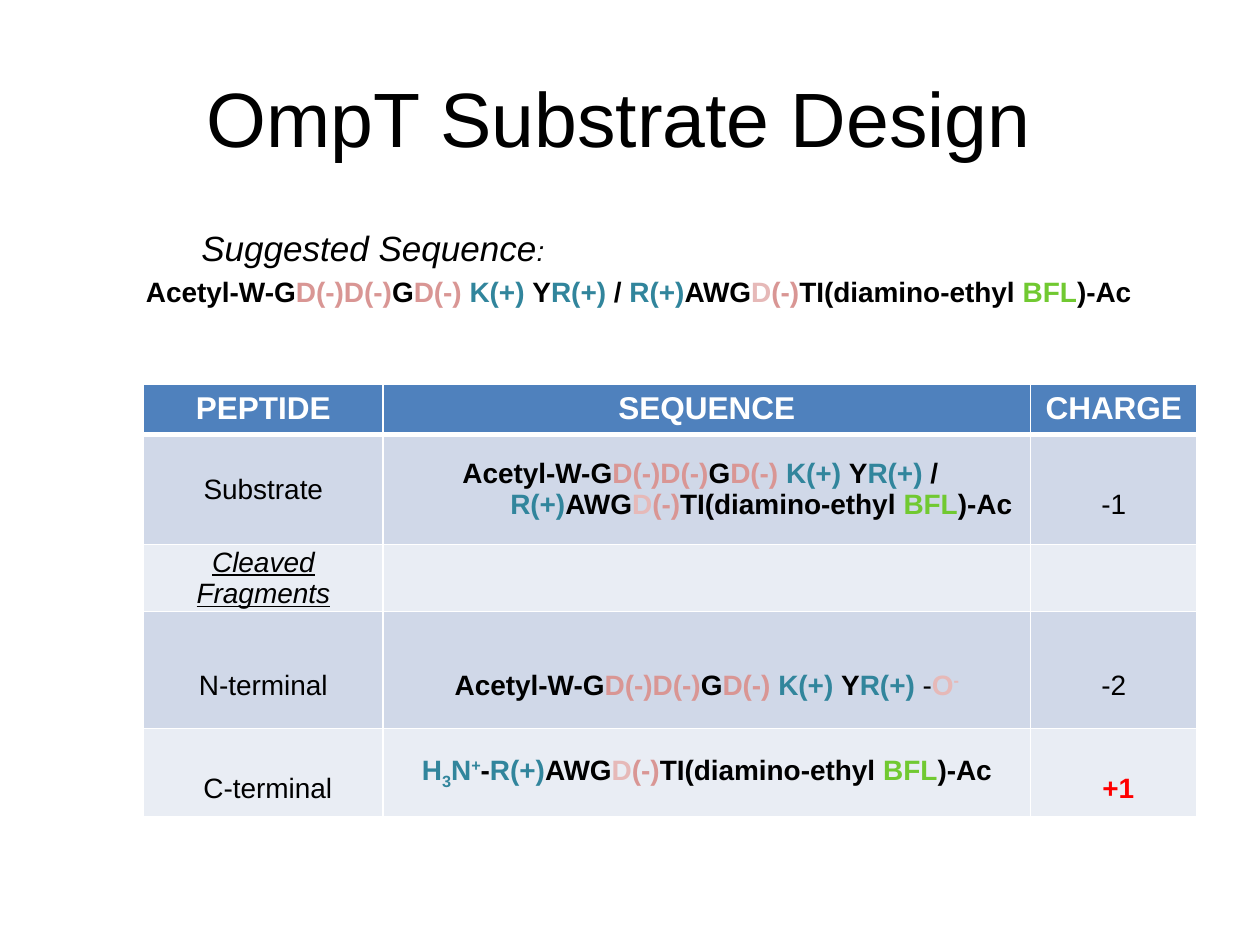
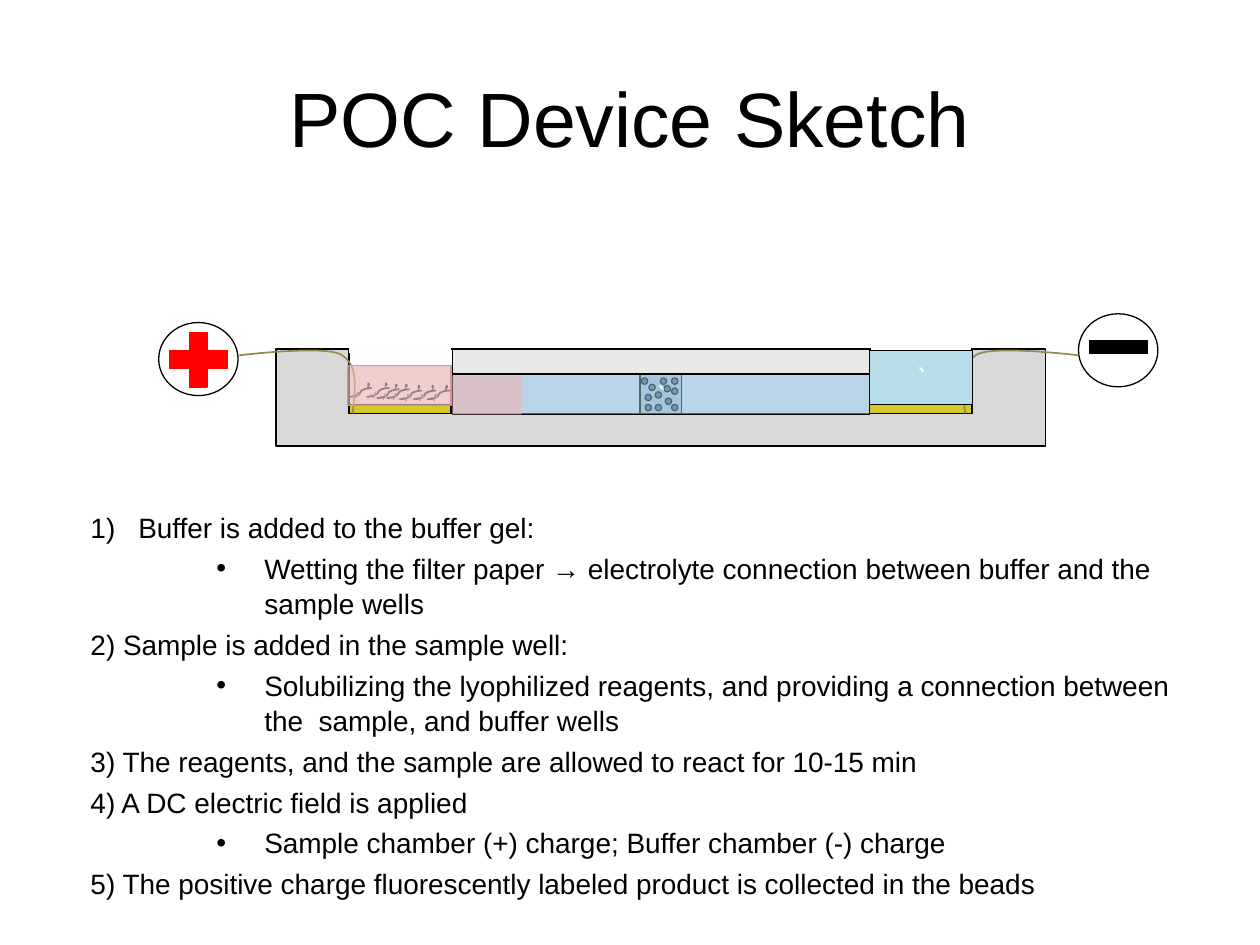
"""Build two slides: a peptide substrate table and a point-of-care device sketch."""
from lxml.etree import SubElement
from pptx import Presentation
from pptx.dml.color import RGBColor
from pptx.enum.shapes import MSO_CONNECTOR, MSO_SHAPE
from pptx.enum.text import MSO_ANCHOR, PP_ALIGN
from pptx.oxml.ns import qn
from pptx.util import Pt

PX = 9144
COLORS = {
    "black": "000000", "white": "FFFFFF", "red": "FF0000", "negative": "D99694",
    "pale": "E6B9B8", "positive": "31859C", "dye": "71C931", "header": "4F81BD",
    "band": "D0D8E8", "light band": "E9EDF4", "base": "D9D9D9", "cover": "E8E8E8",
    "gel": "B9CDE5", "bead gel": "95B3D7", "bead": "376092", "electrode": "D5C828",
    "wire": "948A54", "buffer": "B7DEE8", "minus edge": "C0504D",
}


def add_runs(paragraph, runs, size=16, bold=False, italic=False, underline=False, font="Arial"):
    """Append (text, colour, baseline) runs to a paragraph."""
    for text, color, *baseline in runs:
        run = paragraph.add_run()
        run.text = text
        run.font.name, run.font.size = font, Pt(size)
        run.font.bold, run.font.italic, run.font.underline = bold, italic, underline
        run.font.color.rgb = RGBColor.from_string(COLORS[color])
        if baseline:
            run.font._element.set("baseline", str(baseline[0] * 1000))


def paint(item, line="black", width=0.75, fill=None, alpha=None):
    """Set line, fill and opacity of a shape or connector and remove its shadow."""
    properties = item.element.spPr
    if fill:
        item.fill.solid()
        item.fill.fore_color.rgb = RGBColor.from_string(COLORS[fill])
    if alpha:
        color = properties.find(qn("a:solidFill"))[0]
        SubElement(color, qn("a:alpha")).set("val", str(alpha * 1000))
    if line:
        item.line.color.rgb = RGBColor.from_string(COLORS[line])
        item.line.width = Pt(width)
    else:
        item.line.fill.background()
    SubElement(properties, qn("a:effectLst"))


presentation = Presentation()
presentation.slide_width, presentation.slide_height = 1000 * PX, 750 * PX
slides = []
for title in ("OmpT Substrate Design ", "POC Device Sketch"):
    slide = presentation.slides.add_slide(presentation.slide_layouts[6])
    frame = slide.shapes.add_textbox(50 * PX, 30 * PX, 900 * PX, 125 * PX).text_frame
    frame.word_wrap = True
    frame.vertical_anchor = MSO_ANCHOR.MIDDLE
    frame.paragraphs[0].alignment = PP_ALIGN.CENTER
    add_runs(frame.paragraphs[0], [(title, "black")], 44)
    slides.append(slide)
design_slide, device_slide = slides

n_fragment = [
    ("Acetyl-W-G", "black"), ("D(-)D(-)", "negative"), ("G", "black"), ("D(-)", "negative"),
    (" K(+) ", "positive"), ("Y", "black"), ("R(+) ", "positive"),
]
c_fragment = [
    ("R(+)", "positive"), ("AWG", "black"), ("D", "pale"), ("(-)", "negative"),
    ("TI(diamino-ethyl ", "black"), ("BFL", "dye"), (")-Ac", "black"),
]
substrate = n_fragment + [("/ ", "black")] + c_fragment
amine = [("H", "positive"), ("3", "positive", -25), ("N", "positive"),
         ("+", "positive", 30), ("-", "black")]

frame = design_slide.shapes.add_textbox(50 * PX, 175 * PX, 900 * PX, 495 * PX).text_frame
frame.word_wrap = True
heading, sequence = frame.paragraphs[0], frame.add_paragraph()
for paragraph, margin, space in ((heading, 138, 4), (sequence, 94, 3.2)):
    paragraph.space_before = Pt(space)
    paragraph._p.get_or_add_pPr().set("marL", str(margin * PX))
    paragraph._p.pPr.set("indent", str(-38 * PX))
add_runs(heading, [("Suggested Sequence", "black")], 20, italic=True)
add_runs(heading, [(":", "black")], 16, italic=True)
add_runs(sequence, substrate, bold=True)

peptide_rows = [
    [[(name, "white")] for name in ("PEPTIDE", "SEQUENCE", "CHARGE")],
    [[("Substrate", "black")], substrate, [("-1", "black")]],
    [[("Cleaved Fragments", "black")], [], []],
    [[("N-terminal", "black")], n_fragment, [("-2", "black")]],
    [[("C-terminal", "black")], amine + c_fragment, [("+1", "red")]],
]
double_spaced = {(1, 2), (3, 0), (3, 1), (3, 2), (4, 0), (4, 2)}
table = design_slide.shapes.add_table(5, 3, 114 * PX, 305 * PX, 836 * PX, 333 * PX).table
for column, width in zip(table.columns, (190, 514, 132)):
    column.width = width * PX
for row, height in zip(table.rows, (36, 87, 47, 93, 70)):
    row.height = height * PX
for row_index, row in enumerate(peptide_rows):
    for column_index, runs in enumerate(row):
        cell = table.cell(row_index, column_index)
        place = (row_index, column_index)
        header = row_index == 0
        for side in "LRTB":
            thick = (header and side == "B") or (row_index == 1 and side == "T")
            border = SubElement(cell._tc.get_or_add_tcPr(), qn("a:ln" + side))
            border.set("w", str(Pt(3 if thick else 1)))
            solid = SubElement(border, qn("a:solidFill"))
            SubElement(solid, qn("a:srgbClr")).set("val", COLORS["white"])
        cell.fill.solid()
        band = "header" if header else "band" if row_index % 2 else "light band"
        cell.fill.fore_color.rgb = RGBColor.from_string(COLORS[band])
        if not runs:
            continue
        paragraph = cell.text_frame.paragraphs[0]
        if not header:
            cell.vertical_anchor = MSO_ANCHOR.MIDDLE
            cell.margin_left = cell.margin_right = 7 * PX
            cell.margin_top = cell.margin_bottom = 0
        if place == (1, 1):
            paragraph._p.get_or_add_pPr().set("marL", str(94 * PX))
            paragraph._p.pPr.set("indent", str(-38 * PX))
        else:
            paragraph.alignment = PP_ALIGN.CENTER
        if place in ((4, 0), (4, 2)):
            paragraph._p.get_or_add_pPr().set("marL", str(7 * PX))
        if place in double_spaced:
            paragraph.line_spacing = 2.0
        fragments = row_index == 2
        add_runs(paragraph, runs, 18 if header else 16,
                 bold=header or column_index == 1 or place == (4, 2),
                 italic=fragments, underline=fragments)
        if place == (3, 1):
            add_runs(paragraph, [("-", "black")])
            add_runs(paragraph, [("O", "pale"), ("-", "pale", 30)], bold=True)

shapes = device_slide.shapes
rectangle, ellipse = MSO_SHAPE.RECTANGLE, MSO_SHAPE.OVAL
device_parts = [
    (ellipse, 856, 249, 63, 58, "white"),
    (ellipse, 126, 256, 63, 58, "white"),
    (rectangle, 219, 277, 611, 77, "base"),
    (rectangle, 359, 297, 331, 31, "gel"),
    (rectangle, 508, 297, 33, 31, "bead gel"),
    (rectangle, 277, 277, 82, 51, "white"),
    (rectangle, 690, 277, 82, 51, "white"),
    (rectangle, 359, 277, 331, 20, "cover"),
]
for kind, left, top, width, height, fill in device_parts:
    paint(shapes.add_shape(kind, left * PX, top * PX, width * PX, height * PX), fill=fill)

for start, end, width in ((277, 358, 4.5), (691, 771, 3)):
    opening = shapes.add_connector(MSO_CONNECTOR.STRAIGHT, start * PX, 277 * PX, end * PX, 277 * PX)
    paint(opening, "white", width)

beads = [(509, 300), (533, 300), (512, 321), (533, 321), (528, 316), (524, 300),
         (512, 313), (520, 321), (533, 308), (520, 311), (515, 305), (527, 306)]
for left, top in beads:
    paint(shapes.add_shape(ellipse, left * PX, top * PX, 5 * PX, 5 * PX), fill="bead")
for left in (277, 690):
    electrode = shapes.add_shape(rectangle, left * PX, 321 * PX, 81 * PX, 7 * PX)
    paint(electrode, fill="electrode")

peptide_marks = [
    (MSO_SHAPE.MATH_PLUS, 6, -4, 2, 3, "positive", "positive", 0.75),
    (MSO_SHAPE.MATH_MINUS, 3, -2, 1, 1, "red", "minus edge", 0.5),
    (ellipse, 15, -11, 1, 2, "dye", "black", 0.75),
    (MSO_SHAPE.MATH_MINUS, 5, 0, 1, 1, "red", "minus edge", 0.5),
]
peptide_lines = [
    (MSO_CONNECTOR.CURVE, 0, 0, 18, -7, 1),
    (MSO_CONNECTOR.STRAIGHT, 15, -9, 15, -7, 0.75),
]
for x, y in ((277, 315), (291, 315), (307, 316), (317, 317), (328, 317), (339, 317), (299, 316)):
    for kind, x1, y1, x2, y2, width in peptide_lines:
        strand = shapes.add_connector(
            kind, (x + x1) * PX, (y + y1) * PX, (x + x2) * PX, (y + y2) * PX)
        paint(strand, width=width)
    for kind, dx, dy, width, height, fill, line, weight in peptide_marks:
        mark = shapes.add_shape(kind, (x + dx) * PX, (y + dy) * PX, width * PX, height * PX)
        paint(mark, line, weight, fill)

wire_curves = [
    ((280, 328), (282, 308), (285, 289), (270, 281)),
    ((270, 281), (255, 274), (190, 282), (190, 282)),
]
wire_points = []
for curve in wire_curves:
    for step in range(17):
        t = step / 16
        weights = ((1 - t) ** 3, 3 * t * (1 - t) ** 2, 3 * t * t * (1 - t), t ** 3)
        wire_points.append([sum(w * point[axis] for w, point in zip(weights, curve))
                            for axis in (0, 1)])
for mirrored in (False, True):
    points = [(round((1046 - x if mirrored else x) * PX), round(y * PX)) for x, y in wire_points]
    builder = shapes.build_freeform(*points[0])
    builder.add_line_segments(points[1:], close=False)
    wire = builder.convert_to_shape()
    wire.fill.background()
    paint(wire, "wire", 1)

plus = shapes.add_shape(MSO_SHAPE.MATH_PLUS, 126 * PX, 256 * PX, 63 * PX, 59 * PX)
paint(plus, "red", fill="red")
minus = shapes.add_shape(MSO_SHAPE.MATH_MINUS, 856 * PX, 254 * PX, 63 * PX, 43 * PX)
paint(minus, width=0.5, fill="black")

liquids = [
    (276, 290, 82, 32, "pale", 68, "negative", ""),
    (690, 278, 82, 43, "buffer", None, "black", "`"),
    (359, 297, 331, 32, "buffer", 46, "black", "`"),
    (359, 298, 55, 31, "pale", 68, None, ""),
]
for left, top, width, height, fill, alpha, line, text in liquids:
    liquid = shapes.add_shape(rectangle, left * PX, top * PX, width * PX, height * PX)
    paint(liquid, line, fill=fill, alpha=alpha)
    if text:
        liquid.text_frame.vertical_anchor = MSO_ANCHOR.MIDDLE
        liquid.text_frame.paragraphs[0].alignment = PP_ALIGN.CENTER
        add_runs(liquid.text_frame.paragraphs[0], [(text, "white")], 18, font="Calibri")

steps = [
    ("number", "Buffer is added to the buffer gel:"),
    ("bullet", "Wetting the filter paper → electrolyte connection between buffer and the sample wells"),
    ("plain", "2) Sample is added in the sample well:"),
    ("bullet", "Solubilizing the lyophilized reagents, and providing a connection between "
               "the  sample, and buffer wells"),
    ("plain", "3) The reagents, and the sample are allowed to react for 10-15 min"),
    ("plain", "4) A DC electric field is applied"),
    ("bullet", "Sample chamber (+) charge; Buffer chamber (-) charge"),
    ("plain", "5) The positive charge fluorescently labeled product is collected in the beads"),
]
frame = shapes.add_textbox(62 * PX, 399 * PX, 900 * PX, 324 * PX).text_frame
frame.word_wrap = True
for index, (style, text) in enumerate(steps):
    paragraph = frame.add_paragraph() if index else frame.paragraphs[0]
    paragraph.space_before = Pt(3.2)
    paragraph.line_spacing = 1.05
    properties = paragraph._p.get_or_add_pPr()
    properties.set("marL", str((138 if style == "bullet" else 38) * PX))
    properties.set("indent", str(-38 * PX))
    if style == "bullet":
        SubElement(properties, qn("a:buFont")).set("typeface", "Arial")
        SubElement(properties, qn("a:buChar")).set("char", "•")
    elif style == "number":
        SubElement(properties, qn("a:buFont")).set("typeface", "Arial")
        SubElement(properties, qn("a:buAutoNum")).set("type", "arabicParenR")
    add_runs(paragraph, [(text, "black")])

presentation.save("out.pptx")
